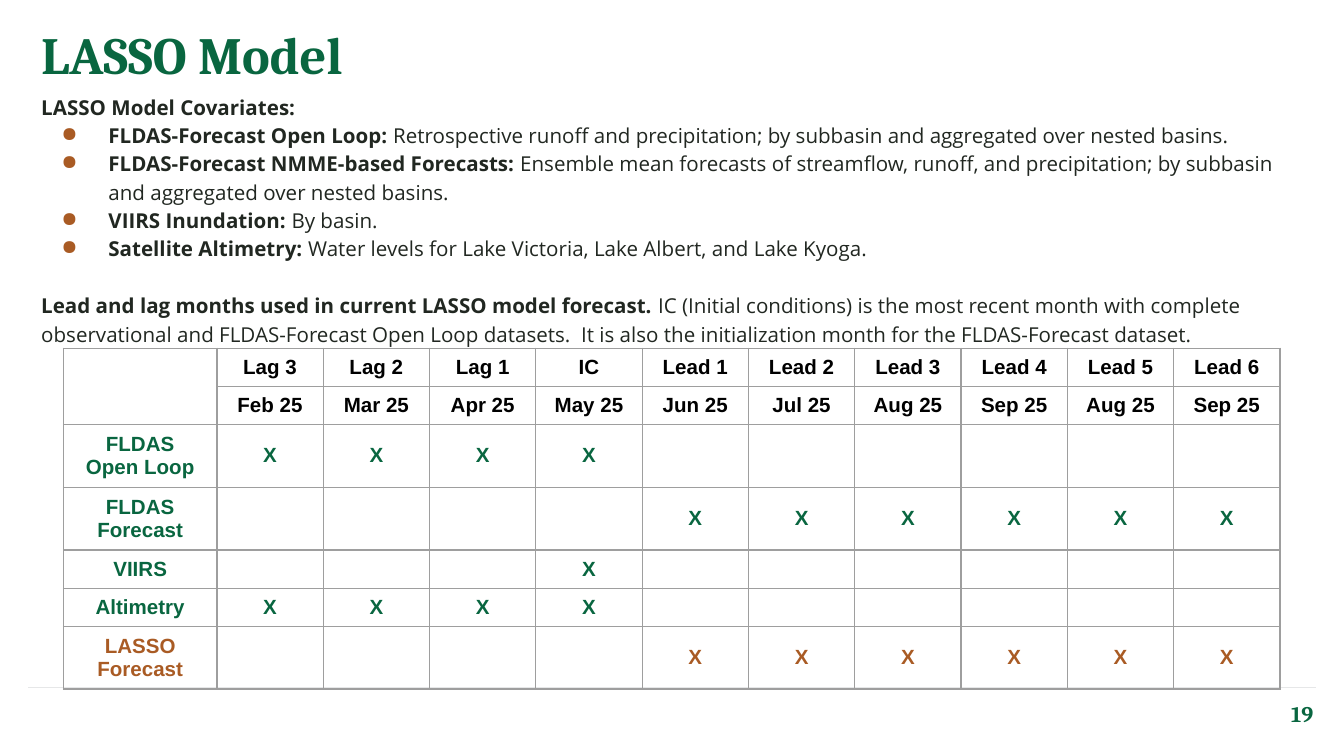
from lxml import etree
from pptx import Presentation, util as u
from pptx.dml.color import RGBColor
from pptx.enum import shapes, text
from pptx.oxml import ns

GREEN = RGBColor(0x09, 0x66, 0x40)
BROWN = RGBColor(0xA9, 0x5B, 0x24)
INK = RGBColor(0x21, 0x27, 0x21)
BLACK = RGBColor(0, 0, 0)
BORDER = RGBColor(0x9E, 0x9E, 0x9E)
RULE = RGBColor(0xE6, 0xE7, 0xE8)

HEADING = {"name": "Cambria", "bold": True}
BODY = {"name": "Open Sans", "size": u.Pt(11)}
TABLE = {"name": "Arial", "size": u.Pt(11), "bold": True}
LINE_PITCH = u.Pt(15.2)

COVARIATES = [
    ("FLDAS-Forecast Open Loop: ",
     "Retrospective runoff and precipitation; by subbasin and aggregated over nested basins."),
    ("FLDAS-Forecast NMME-based Forecasts: ",
     "Ensemble mean forecasts of streamflow, runoff, and precipitation; "
     "by subbasin and aggregated over nested basins."),
    ("VIIRS Inundation: ", "By basin."),
    ("Satellite Altimetry: ", "Water levels for Lake Victoria, Lake Albert, and Lake Kyoga."),
]
LEAD_NOTE = (
    "Lead and lag months used in current LASSO model forecast. ",
    "IC (Initial conditions) is the most recent month with complete observational and "
    "FLDAS-Forecast Open Loop datasets.  It is also the initialization month for the "
    "FLDAS-Forecast dataset.",
)

PERIODS = ["Lag 3", "Lag 2", "Lag 1", "IC"] + [f"Lead {lead}" for lead in range(1, 7)]
MONTHS = [f"{month} 25" for month in "Feb Mar Apr May Jun Jul Aug Sep Aug Sep".split()]
OBSERVED = range(0, 4)
INITIAL = range(3, 4)
FORECAST = range(4, 10)
DATASETS = [
    ("FLDAS\nOpen Loop", OBSERVED, GREEN, 1.13),
    ("FLDAS\nForecast", FORECAST, GREEN, 1.13),
    ("VIIRS", INITIAL, GREEN, 0.68),
    ("Altimetry", OBSERVED, GREEN, 0.68),
    ("LASSO Forecast", FORECAST, BROWN, 1.13),
]


def apply(target, values):
    for name, value in values.items():
        setattr(target, name, value)


def add_element(parent, tag, **attributes):
    return etree.SubElement(parent, ns.qn(tag), attributes)


def add_colour(parent, colour):
    add_element(parent, "a:srgbClr", val=str(colour))


class SlideBuilder:
    def __init__(self, slide):
        self.slide = slide
        self.inset = u.Cm(0.25)

    def rule(self, left, right, y):
        line = self.slide.shapes.add_connector(
            shapes.MSO_CONNECTOR.STRAIGHT, u.Cm(left), u.Cm(y), u.Cm(right), u.Cm(y))
        line.line.color.rgb = RULE
        line.line.width = u.Pt(0.75)
        add_element(line._element.spPr, "a:effectLst")

    def text_frame(self, left, top, width, height, anchor=text.MSO_ANCHOR.TOP):
        box = self.slide.shapes.add_textbox(u.Cm(left), u.Cm(top), u.Cm(width), u.Cm(height))
        frame = box.text_frame
        sides = ("left", "top", "right", "bottom")
        apply(frame, {f"margin_{side}": self.inset for side in sides})
        apply(frame, {"word_wrap": True, "vertical_anchor": anchor})
        return frame

    def run(self, paragraph, words, style, colour):
        run = paragraph.add_run()
        run.text = words
        apply(run.font, style)
        run.font.color.rgb = colour

    def heading(self, words, place, size, **layout):
        frame = self.text_frame(*place, anchor=layout.pop("anchor", text.MSO_ANCHOR.TOP))
        paragraph = frame.paragraphs[0]
        apply(paragraph, layout)
        self.run(paragraph, words, {**HEADING, "size": u.Pt(size)}, GREEN)

    def body_line(self, paragraph, label, words="", bullet=False, **layout):
        apply(paragraph, {"line_spacing": LINE_PITCH, **layout})
        if bullet:
            properties = paragraph._p.get_or_add_pPr()
            properties.set("marL", str(u.Cm(1.27)))
            properties.set("indent", str(-u.Cm(0.89)))
            add_colour(add_element(properties, "a:buClr"), BROWN)
            add_element(properties, "a:buChar", char="●")
        self.run(paragraph, label, {**BODY, "bold": True}, INK)
        if words:
            self.run(paragraph, words, {**BODY, "bold": False}, INK)

    def cell(self, cell, words="", colour=BLACK):
        cell.vertical_anchor = text.MSO_ANCHOR.MIDDLE
        properties = cell._tc.get_or_add_tcPr()
        for side in ("a:lnL", "a:lnR", "a:lnT", "a:lnB"):
            border = add_element(properties, side, w=str(u.Pt(0.75)))
            add_colour(add_element(border, "a:solidFill"), BORDER)
        cell.fill.background()
        cell.text = words
        for paragraph in cell.text_frame.paragraphs:
            paragraph.alignment = text.PP_ALIGN.CENTER
            for run in paragraph.runs:
                apply(run.font, TABLE)
                run.font.color.rgb = colour
            if not paragraph.runs:
                add_element(paragraph._p, "a:endParaRPr", sz="1100")

    def table(self, left, top, rows, heights, widths):
        frame = self.slide.shapes.add_table(
            len(rows), len(widths), u.Cm(left), u.Cm(top), u.Cm(sum(widths)), u.Cm(sum(heights)))
        table = frame.table
        apply(table, {"first_row": False, "horz_banding": False})
        for column, width in zip(table.columns, widths):
            column.width = u.Cm(width)
        for index, (words, colour) in enumerate(rows):
            table.rows[index].height = u.Cm(heights[index])
            for cell, word in zip(table.rows[index].cells, words):
                self.cell(cell, word, colour)
        table.cell(0, 0).merge(table.cell(1, 0))


def main():
    presentation = Presentation()
    apply(presentation, {"slide_width": u.Cm(25.4), "slide_height": u.Cm(14.29)})
    builder = SlideBuilder(presentation.slides.add_slide(presentation.slide_layouts[6]))

    builder.rule(0.53, 24.87, 13)
    builder.heading("19", (23.55, 12.95, 1.52, 1.09), 12,
                    anchor=text.MSO_ANCHOR.MIDDLE, alignment=text.PP_ALIGN.RIGHT)
    builder.heading("LASSO Model", (0.53, 0.18, 21.29, 1.6), 28)

    body = builder.text_frame(0.53, 1.47, 24.33, 10.9)
    builder.body_line(body.paragraphs[0], "LASSO Model Covariates:")
    for label, words in COVARIATES:
        builder.body_line(body.add_paragraph(), label, words, bullet=True)
    builder.body_line(body.add_paragraph(), *LEAD_NOTE, space_before=LINE_PITCH)

    rows = [([""] + PERIODS, BLACK), ([""] + MONTHS, BLACK)]
    for name, marked, colour, _ in DATASETS:
        marks = ["X" if column in marked else "" for column in range(len(PERIODS))]
        rows.append(([name] + marks, colour))
    heights = [0.68, 0.68] + [height for *_, height in DATASETS]
    builder.table(1.2, 6.58, rows, heights, [2.9] + [2.01] * len(PERIODS))

    presentation.save("out.pptx")


if __name__ == "__main__":
    main()
